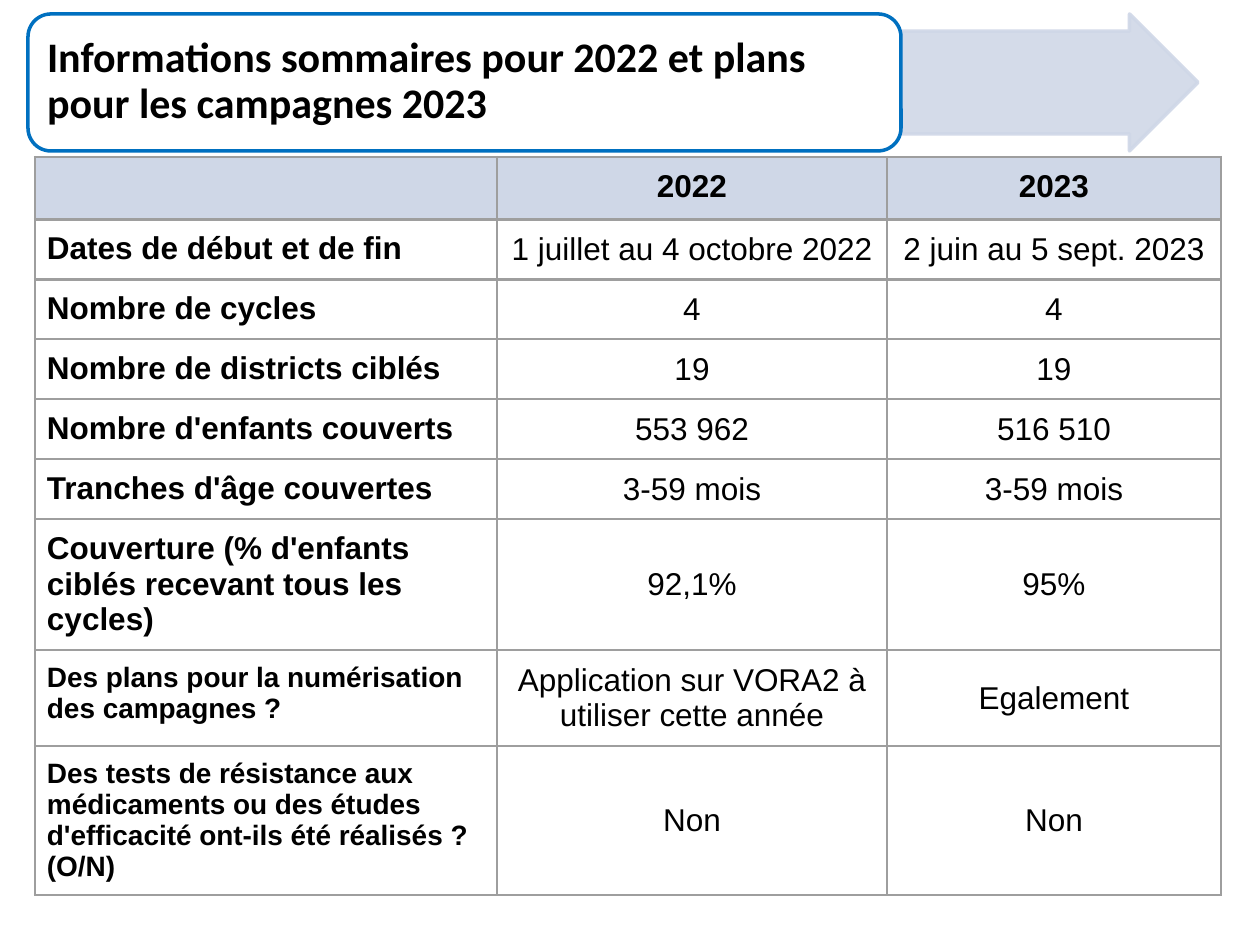
from lxml import etree
from pptx import Presentation
from pptx.dml.color import RGBColor
from pptx.enum.shapes import MSO_SHAPE
from pptx.enum.text import MSO_ANCHOR, MSO_AUTO_SIZE, PP_ALIGN
from pptx.oxml.ns import qn
from pptx.util import Emu, Pt

PX_PER_INCH = 126
EMU_PER_PX = 914400 / PX_PER_INCH

BLACK = RGBColor(0x00, 0x00, 0x00)
WHITE = RGBColor(0xFF, 0xFF, 0xFF)
BLUE = RGBColor(0x00, 0x70, 0xC0)
PALE_BLUE = RGBColor(0xCF, 0xD7, 0xE7)
GREY = RGBColor(0x9E, 0x9E, 0x9E)

ARROW = MSO_SHAPE.RIGHT_ARROW
ROUNDED = MSO_SHAPE.ROUNDED_RECTANGLE
LEFT, CENTER = PP_ALIGN.LEFT, PP_ALIGN.CENTER
TOP, MIDDLE = MSO_ANCHOR.TOP, MSO_ANCHOR.MIDDLE
NO_AUTOFIT = MSO_AUTO_SIZE.NONE

TITLE = "Informations sommaires pour 2022 et plans pour les campagnes 2023"
COLUMN_WIDTHS = [462, 390, 334]
# Row height, size of the row label, cell texts
ROWS = [
    (60, 18, ["", "2022", "2023"]),
    (60, 18, ["Dates de début et de fin", "1 juillet au 4 octobre 2022", "2 juin au 5 sept. 2023"]),
    (60, 18, ["Nombre de cycles", "4", "4"]),
    (60, 18, ["Nombre de districts ciblés", "19", "19"]),
    (60, 18, ["Nombre d'enfants couverts", "553 962", "516 510"]),
    (60, 18, ["Tranches d'âge couvertes", "3-59 mois", "3-59 mois"]),
    (131, 18, ["Couverture (% d'enfants ciblés recevant tous les cycles)", "92,1%", "95%"]),
    (96, 16, ["Des plans pour la numérisation des campagnes ?",
              "Application sur VORA2 à utiliser cette année", "Egalement"]),
    (149, 16, ["Des tests de résistance aux médicaments ou des études d'efficacité "
               "ont-ils été réalisés ? (O/N)", "Non", "Non"]),
]


def px(length):
    return Emu(round(length * EMU_PER_PX))


class SlideBuilder:
    body_font = "Arial"
    title_font = "Calibri"
    body_size = 18
    title_size = 24
    margin = 12

    def __init__(self, slide):
        self.slide = slide

    def add_run(self, paragraph, text, font, size, bold):
        run = paragraph.add_run()
        run.text = text
        run.font.name = font
        run.font.size = Pt(size)
        run.font.bold = bold
        run.font.color.rgb = BLACK

    def shape(self, kind, box, fill, line, adjustments, opacity=None):
        shape = self.slide.shapes.add_shape(kind, *map(px, box))
        shape.shadow.inherit = False
        for index, value in enumerate(adjustments):
            shape.adjustments[index] = value
        shape.fill.solid()
        shape.fill.fore_color.rgb = fill
        shape.line.color.rgb = line
        shape.line.width = Pt(2)
        if opacity is not None:
            for color in shape._element.spPr.iter(qn("a:srgbClr")):
                etree.SubElement(color, qn("a:alpha"), val=str(opacity * 1000))

    def title(self, text, box):
        title = self.slide.shapes.title
        title.left, title.top, title.width, title.height = map(px, box)
        frame = title.text_frame
        frame.word_wrap = True
        frame.auto_size = NO_AUTOFIT
        frame.vertical_anchor = MIDDLE
        frame.margin_left = frame.margin_right = px(self.margin)
        frame.margin_top = frame.margin_bottom = px(6)
        paragraph = frame.paragraphs[0]
        paragraph.alignment = LEFT
        paragraph.line_spacing = 0.9
        self.add_run(paragraph, text, self.title_font, self.title_size, True)
        # Bring the title in front of its frame
        self.slide.shapes._spTree.append(title._element)

    def table(self, left, top, widths, rows):
        heights = [height for height, _, _ in rows]
        table = self.slide.shapes.add_table(
            len(rows), len(widths), px(left), px(top), px(sum(widths)), px(sum(heights))
        ).table
        table.horz_banding = False
        for column, width in zip(table.columns, widths):
            column.width = px(width)
        for row_index, (height, label_size, texts) in enumerate(rows):
            table.rows[row_index].height = px(height)
            for column_index, text in enumerate(texts):
                size = self.body_size if column_index else label_size
                self.cell(table.cell(row_index, column_index), text, size,
                          is_header=row_index == 0, is_label=column_index == 0)

    def cell(self, cell, text, size, is_header, is_label):
        cell.margin_left = cell.margin_right = px(self.margin)
        cell.margin_top = cell.margin_bottom = px(self.margin)
        cell.vertical_anchor = TOP if is_header or is_label else MIDDLE
        self.borders(cell)
        cell.fill.solid()
        cell.fill.fore_color.rgb = PALE_BLUE if is_header else WHITE
        paragraph = cell.text_frame.paragraphs[0]
        paragraph.font.size = Pt(size)
        if text:
            paragraph.alignment = LEFT if is_label else CENTER
            self.add_run(paragraph, text, self.body_font, size, is_header or is_label)

    def borders(self, cell):
        properties = cell._tc.get_or_add_tcPr()
        for side in ("a:lnL", "a:lnR", "a:lnT", "a:lnB"):
            line = etree.SubElement(properties, qn(side), w=str(Pt(1.5)))
            fill = etree.SubElement(line, qn("a:solidFill"))
            etree.SubElement(fill, qn("a:srgbClr"), val=str(GREY))


def main():
    presentation = Presentation()
    presentation.slide_width = px(1260)
    presentation.slide_height = px(945)
    title_only = presentation.slide_layouts[5]
    builder = SlideBuilder(presentation.slides.add_slide(title_only))

    # Title band
    builder.shape(ARROW, (901, 14, 297, 137), PALE_BLUE, PALE_BLUE, [0.75, 0.5], opacity=89)
    builder.shape(ROUNDED, (28, 14, 873, 137), WHITE, BLUE, [0.167])
    builder.title(TITLE, (35, 20, 859, 124))

    # Campaign comparison
    builder.table(35, 157, COLUMN_WIDTHS, ROWS)

    presentation.save("out.pptx")


if __name__ == "__main__":
    main()
